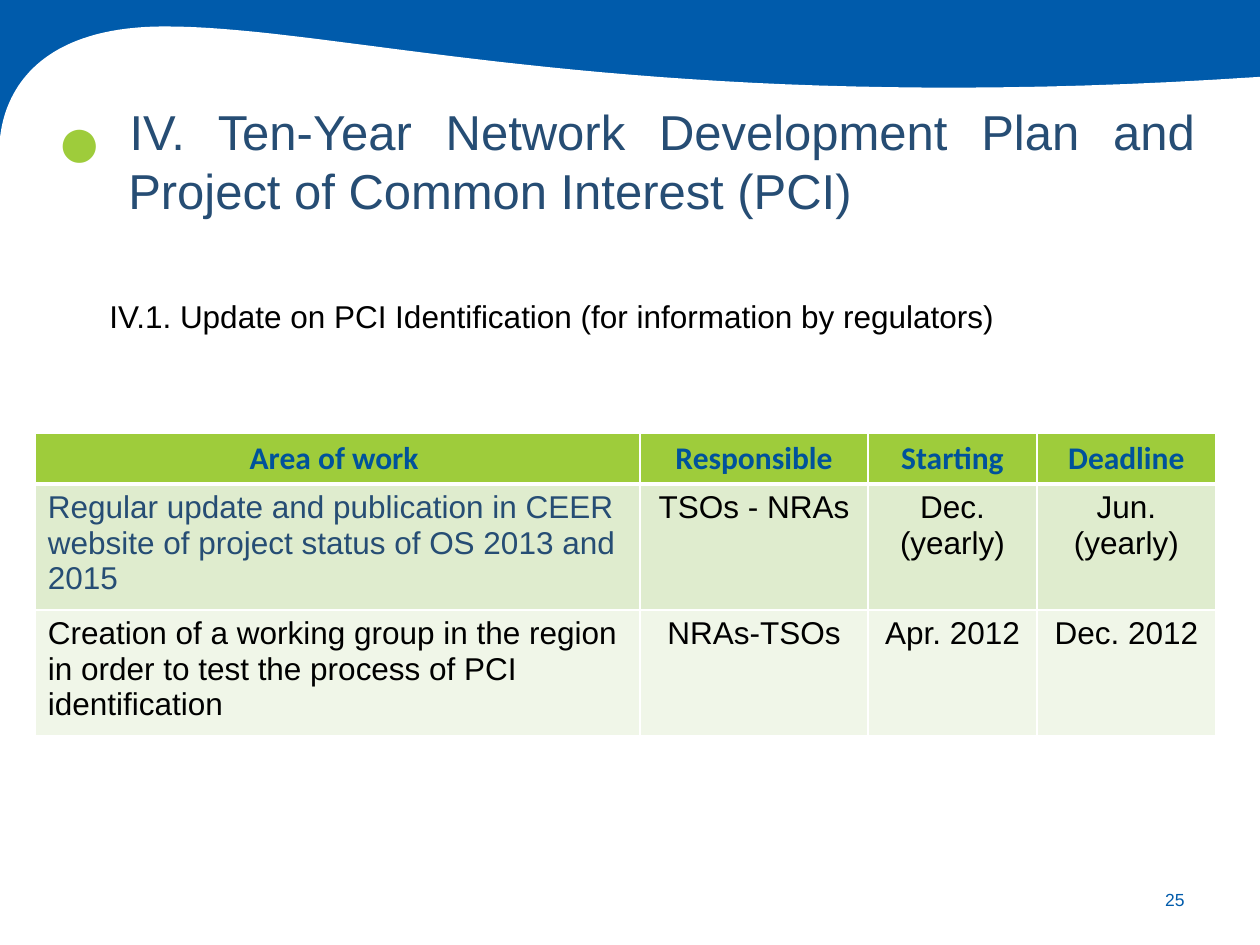
import pptx
import pptx.dml.color
import pptx.enum.shapes
import pptx.enum.text
import pptx.oxml.ns
import pptx.util
from lxml import etree
from pptx.util import Inches

COLORS = {
    "blue": "005BAB", "white": "FFFFFF", "green": "9ECC3B", "navy": "264D74",
    "header": "00529B", "black": "000000", "band_dark": "DFECCE", "band_light": "F0F6E8",
}
ALIGN = pptx.enum.text.PP_ALIGN
ANCHOR = pptx.enum.text.MSO_ANCHOR


def rgb(name):
    """Return the named colour."""
    return pptx.dml.color.RGBColor.from_string(COLORS[name])


def paint(sp, color):
    """Give a shape a plain fill with no line or shadow."""
    sp.shadow.inherit = False
    sp.fill.solid()
    sp.fill.fore_color.rgb = rgb(color)
    sp.line.fill.background()


def write(tf, text, size, color, align=ALIGN.LEFT, font="Arial", bold=False):
    """Write one run in the first paragraph and return the paragraph."""
    p = tf.paragraphs[0]
    p.alignment = align
    r = p.add_run()
    r.text = text
    r.font.size = pptx.util.Pt(size)
    r.font.name = font
    r.font.bold = bold
    r.font.color.rgb = rgb(color)
    return p


def add_text(s, box, text, size, color, align=ALIGN.LEFT, anchor=ANCHOR.TOP, indent=(0, 0)):
    """Add a wrapped text box with a left margin and first-line indent."""
    tf = s.shapes.add_textbox(*map(Inches, box)).text_frame
    tf.word_wrap = True
    tf.vertical_anchor = anchor
    p = write(tf, text, size, color, align)
    pPr = p._p.get_or_add_pPr()
    pPr.set("marL", str(Inches(indent[0])))
    pPr.set("indent", str(Inches(indent[1])))
    return p


def bezier(points, steps=40):
    """Sample a cubic curve after its first point."""
    for i in range(1, steps + 1):
        t = i / steps
        weights = ((1 - t) ** 3, 3 * t * (1 - t) ** 2, 3 * t * t * (1 - t), t ** 3)
        yield tuple(Inches(sum(w * c for w, c in zip(weights, axis))) for axis in zip(*points))


def add_background(s, box, banner_height):
    """Draw the blue banner and the white wave that fills the rest of the box."""
    x, y, w, h = box
    banner = s.shapes.add_shape(pptx.enum.shapes.MSO_SHAPE.RECTANGLE,
                                *map(Inches, (x, y, w, banner_height)))
    paint(banner, "blue")
    start, crest, end = (x, y + 1.1), (x + 1.31, y + 0.21), (x + w, y + 0.61)
    curves = (
        (start, (x + 0.03, y + 0.8), (x + 0.23, y + 0.21), crest),
        (crest, (x + 2.76, y + 0.21), (x + 5.1, y + 0.94), end),
    )
    wave = s.shapes.build_freeform(*map(Inches, start))
    for curve in curves:
        wave.add_line_segments(bezier(curve), close=False)
    bottom = Inches(y + h)
    wave.add_line_segments([(Inches(x + w), bottom), (Inches(x), bottom)], close=True)
    paint(wave.convert_to_shape(), "white")


def add_title(s, box):
    """Place the round bullet and the title."""
    x, y, w, h = box
    add_text(s, (x, y, 0.55, 0.94), "●", 44, "green", ALIGN.CENTER, ANCHOR.BOTTOM, (0.39, -0.39))
    p = add_text(s, (x + 0.48, y + 0.19, w - 0.48, h - 0.19),
                 "IV. Ten-Year Network Development Plan and Project of Common Interest (PCI)",
                 28, "navy", ALIGN.JUSTIFY, indent=(0.09, 0.01))
    p.space_after = pptx.util.Pt(2)


def add_subtitle(s, box):
    """Place the section heading."""
    p = add_text(s, box, "IV.1. Update on PCI Identification (for information by regulators)",
                 18, "black", indent=(0.39, -0.29))
    p.line_spacing = 1.2
    p.space_after = pptx.util.Pt(2)


def set_borders(cell, widths):
    """Draw white cell borders with the given widths in points."""
    tcPr = cell._tc.get_or_add_tcPr()
    for side, width in widths.items():
        ln = etree.SubElement(tcPr, pptx.oxml.ns.qn(f"a:ln{side}"), w=str(pptx.util.Pt(width)))
        fill = etree.SubElement(ln, pptx.oxml.ns.qn("a:solidFill"))
        etree.SubElement(fill, pptx.oxml.ns.qn("a:srgbClr"), val=COLORS["white"])


def add_work_table(s, box):
    """Build the table of work areas."""
    rows = (
        ("Area of work ", "Responsible", "Starting", "Deadline"),
        ("Regular update and publication in CEER website of project status of OS 2013 and 2015",
         "TSOs - NRAs", "Dec. (yearly)", "Jun. (yearly)"),
        ("Creation of a working group in the region in order to test the process of PCI identification",
         "NRAs-TSOs", "Apr. 2012", "Dec. 2012"),
    )
    fills = ("green", "band_dark", "band_light")
    table = s.shapes.add_table(len(rows), len(rows[0]), *map(Inches, box)).table
    for column, width in zip(table.columns, (4.8, 1.81, 1.34, 1.42)):
        column.width = Inches(width)
    for row, height in zip(table.rows, (0.4, 1, 1)):
        row.height = Inches(height)
    for i, row in enumerate(rows):
        for j, text in enumerate(row):
            cell = table.cell(i, j)
            header = i == 0
            set_borders(cell, {"L": 1, "R": 1, "T": 3 if i == 1 else 1, "B": 3 if header else 1})
            cell.fill.solid()
            cell.fill.fore_color.rgb = rgb(fills[i])
            align = ALIGN.CENTER if header or j else ALIGN.LEFT
            color = "header" if header else "navy" if (i, j) == (1, 0) else "black"
            write(cell.text_frame, text, 18, color, align, "Calibri" if header else "Arial", header)


def add_page_number(s, box):
    """Place the page number."""
    add_text(s, box, "25", 10, "blue", ALIGN.RIGHT, ANCHOR.MIDDLE)


def main():
    """Build and save the slide."""
    prs = pptx.Presentation()
    prs.slide_width, prs.slide_height = Inches(10), Inches(7.5)
    s = prs.slides.add_slide(prs.slide_layouts[6])
    add_background(s, (0, 0, 10, 7.5), 1.15)
    add_page_number(s, (8.94, 6.94, 0.56, 0.4))
    add_title(s, (0.35, 0.57, 9.23, 1.23))
    add_work_table(s, (0.28, 3.44, 9.37, 2.4))
    add_subtitle(s, (0.67, 2.25, 8.55, 0.5))
    prs.save("out.pptx")


if __name__ == "__main__":
    main()
